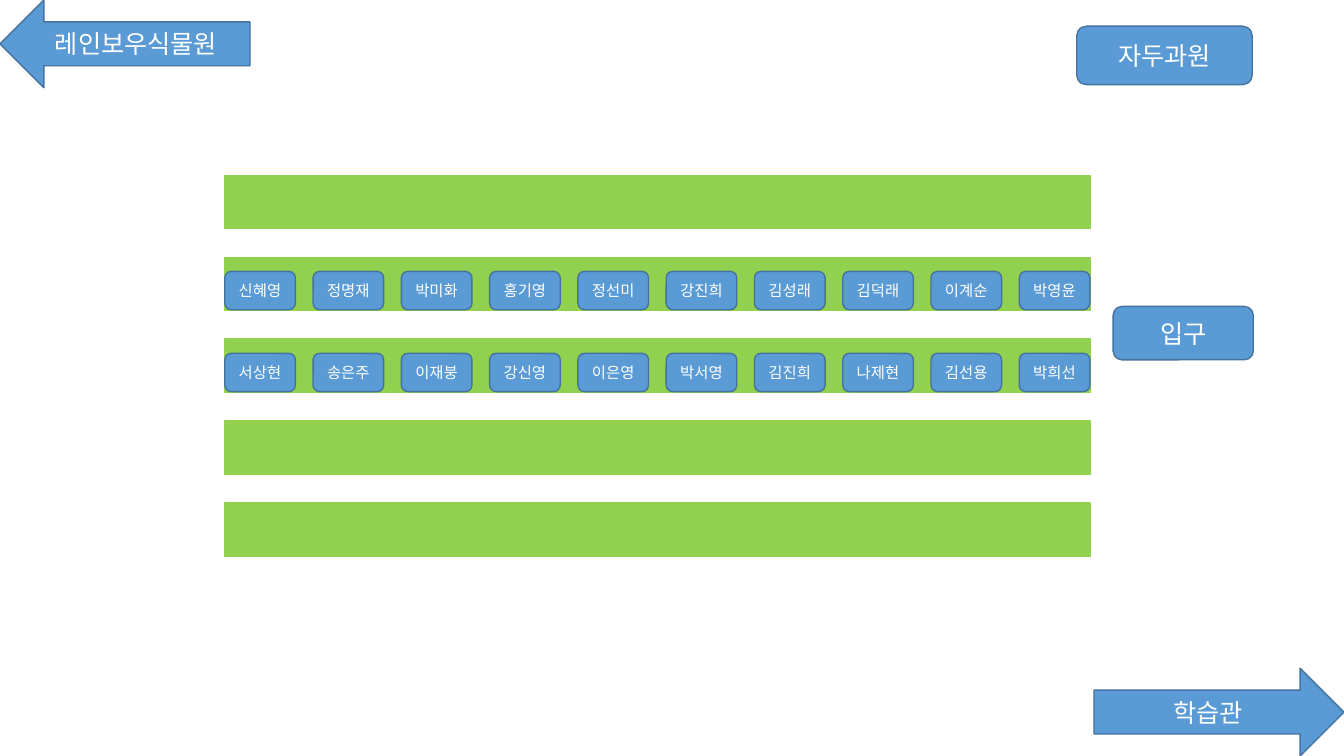
from lxml import etree
from pptx import Presentation
from pptx.dml.color import RGBColor
from pptx.enum.shapes import MSO_SHAPE
from pptx.enum.text import MSO_ANCHOR, PP_ALIGN
from pptx.oxml.ns import qn
from pptx.util import Inches, Pt

RECT = MSO_SHAPE.RECTANGLE
ROUNDED = MSO_SHAPE.ROUNDED_RECTANGLE
LEFT_ARROW = MSO_SHAPE.LEFT_ARROW
RIGHT_ARROW = MSO_SHAPE.RIGHT_ARROW
CENTER = PP_ALIGN.CENTER
MIDDLE = MSO_ANCHOR.MIDDLE

SLIDE_W, SLIDE_H = 13.33, 7.5
ARROW_W, ARROW_H = 2.48, 0.87
FONT = "Noto Sans CJK KR"
BLUE, DARK_BLUE, GREEN, WHITE = "5B9BD5", "43739E", "92D050", "FFFFFF"

BED_LEFT, BED_TOP, BED_W, BED_H = 2.23, 1.74, 8.58, 0.53
BED_COUNT, BED_LAST_TOP = 5, 4.99
BED_STEP = (BED_LAST_TOP - BED_TOP) / (BED_COUNT - 1)
TAG_W, TAG_H, TAG_DROP = 0.7, 0.38, 0.14

NAMES_BY_BED = {
    1: ["신혜영", "정명재", "박미화", "홍기영", "정선미",
        "강진희", "김성래", "김덕래", "이계순", "박영윤"],
    2: ["서상현", "송은주", "이재붕", "강신영", "이은영",
        "박서영", "김진희", "나제현", "김선용", "박희선"],
}
SIGNS = [
    (ROUNDED, "자두과원", (10.68, 0.26, 1.74, 0.58)),
    (RIGHT_ARROW, "학습관",
     (SLIDE_W - ARROW_W, SLIDE_H - ARROW_H, ARROW_W, ARROW_H)),
    (LEFT_ARROW, "레인보우식물원", (0, 0, ARROW_W, ARROW_H)),
    (ROUNDED, "입구", (11.04, 3.04, 1.39, 0.53)),
]


def color(value):
    """Turn a hex string into a colour."""
    return RGBColor.from_string(value)


def add_box(s, kind, box, fill, line):
    """Add a flat shape with a one-point outline."""
    sp = s.shapes.add_shape(kind, *(Inches(v) for v in box))
    sp.shadow.inherit = False
    sp.fill.solid()
    sp.fill.fore_color.rgb = color(fill)
    sp.line.color.rgb = color(line)
    sp.line.width = Pt(1)
    return sp


def add_label(s, kind, text, box, size):
    """Add a blue shape with a centred white label."""
    sp = add_box(s, kind, box, BLUE, DARK_BLUE)
    tf = sp.text_frame
    tf.vertical_anchor = MIDDLE
    p = tf.paragraphs[0]
    p.alignment = CENTER
    r = p.add_run()
    r.text = text
    for key, value in {"name": FONT, "size": Pt(size)}.items():
        setattr(r.font, key, value)
    r.font.color.rgb = color(WHITE)
    etree.SubElement(r.font._element, qn("a:ea"), typeface=FONT)


def add_bed(s, row):
    """Add one green planting bed."""
    box = (BED_LEFT, BED_TOP + row * BED_STEP, BED_W, BED_H)
    add_box(s, RECT, box, GREEN, GREEN)


def add_names(s, row, names):
    """Spread name tags evenly along a bed."""
    step = (BED_W - TAG_W) / (len(names) - 1)
    top = BED_TOP + row * BED_STEP + TAG_DROP
    for col, name in enumerate(names):
        add_label(s, ROUNDED, name,
                  (BED_LEFT + col * step, top, TAG_W, TAG_H), 11)


def main():
    """Build the garden map and save it."""
    prs = Presentation()
    prs.slide_width, prs.slide_height = Inches(SLIDE_W), Inches(SLIDE_H)
    s = prs.slides.add_slide(prs.slide_layouts[6])
    for row in range(BED_COUNT):
        add_bed(s, row)
    for row, names in NAMES_BY_BED.items():
        add_names(s, row, names)
    for kind, text, box in SIGNS:
        add_label(s, kind, text, box, 18)
    prs.save("out.pptx")


if __name__ == "__main__":
    main()
